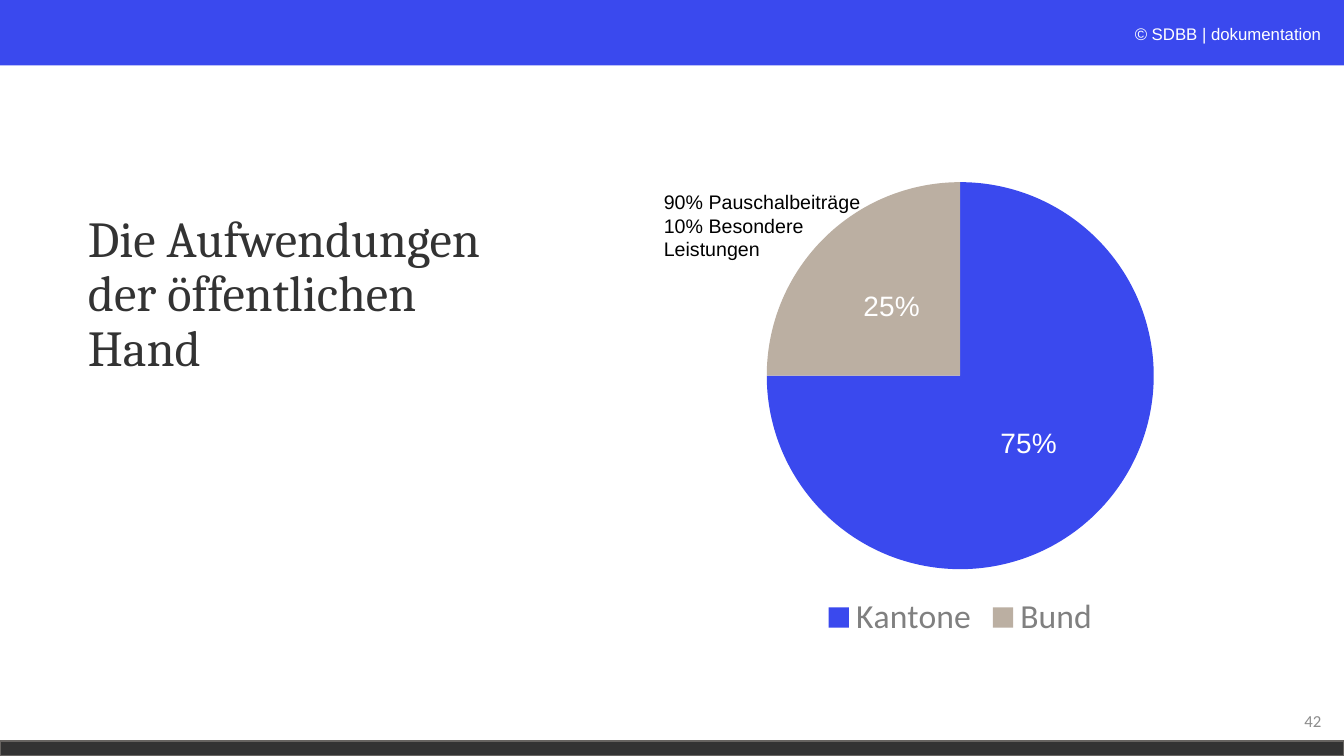
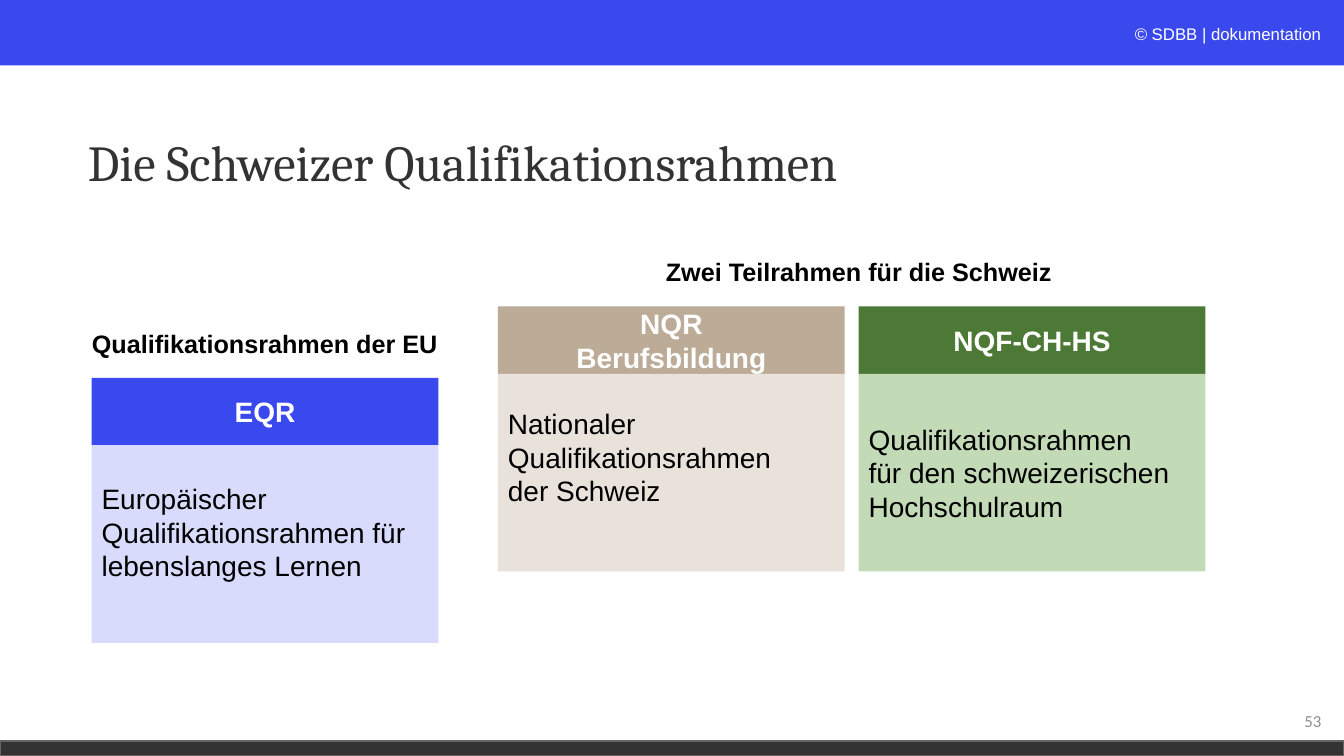
from pptx import Presentation
from pptx.chart.data import CategoryChartData
from pptx.dml.color import RGBColor
from pptx.enum.chart import XL_CHART_TYPE as ChartType
from pptx.enum.chart import XL_LABEL_POSITION as LabelPosition
from pptx.enum.chart import XL_LEGEND_POSITION as LegendPosition
from pptx.enum.shapes import MSO_SHAPE as Preset
from pptx.enum.text import MSO_ANCHOR as Anchor
from pptx.enum.text import MSO_AUTO_SIZE as AutoSize
from pptx.enum.text import PP_ALIGN as Align
from pptx.util import Cm, Pt


class Theme:
    blue = RGBColor.from_string("3A49EE")
    pale_blue = RGBColor.from_string("D8DBFC")
    sand = RGBColor.from_string("BCAB96")
    pale_sand = RGBColor.from_string("E8E2DB")
    chart_sand = RGBColor.from_string("BBAFA2")
    green = RGBColor.from_string("4C7936")
    pale_green = RGBColor.from_string("C2DAB6")
    charcoal = RGBColor.from_string("333333")
    edge = RGBColor.from_string("666360")
    legend_grey = RGBColor.from_string("808080")
    number_grey = RGBColor.from_string("8C8C8C")
    white = RGBColor.from_string("FFFFFF")
    black = RGBColor.from_string("000000")
    sans, serif, plain = "Arial", "Cambria", "Calibri"
    title, legend, card, caption, note, small = (Pt(n) for n in (36, 24, 20, 18, 14, 12))


def write(shape, text, size, color, align=Align.LEFT, font=Theme.sans, bold=False, anchor=Anchor.TOP):
    frame = shape.text_frame
    frame.text = text
    frame.word_wrap = True
    frame.auto_size = AutoSize.NONE
    frame.vertical_anchor = anchor
    for para in frame.paragraphs:
        para.alignment = align
        for span in para.runs:
            span.font.name = font
            span.font.size = size
            span.font.bold = bold
            span.font.color.rgb = color


def add_page(title, width, height, number):
    page = deck.slides.add_slide(layout)
    heading = page.shapes.title
    heading.left, heading.top = Cm(1.96), Cm(2.31)
    heading.width, heading.height = Cm(width), Cm(height)
    write(heading, title, Theme.title, Theme.charcoal, font=Theme.serif, anchor=Anchor.MIDDLE)
    heading.text_frame.paragraphs[0].line_spacing = 0.9
    box = page.shapes.add_textbox(Cm(25.93), Cm(17.65), Cm(7.62), Cm(1.02))
    write(box, number, Theme.small, Theme.number_grey, Align.RIGHT, Theme.plain, anchor=Anchor.MIDDLE)
    return page


deck = Presentation()
deck.slide_width, deck.slide_height = Cm(33.87), Cm(19.05)
layout = deck.slide_layouts.get_by_name("Title Only")

spending = add_page("Die Aufwendungen der öffentlichen Hand", 11.86, 10.26, "42")
frameworks = add_page("Die Schweizer Qualifikationsrahmen", 22.4, 3.68, "53")

top_band = spending.shapes.add_shape(Preset.RECTANGLE, 0, 0, deck.slide_width, Cm(1.65))
bottom_band = spending.shapes.add_shape(Preset.RECTANGLE, 0, Cm(18.67), deck.slide_width, Cm(0.38))
for band, color in ((top_band, Theme.blue), (bottom_band, Theme.charcoal)):
    band.shadow.inherit = False
    band.fill.solid()
    band.fill.fore_color.rgb = color
top_band.line.fill.background()
bottom_band.line.color.rgb = Theme.edge
bottom_band.line.width = Pt(1)

credit = spending.shapes.add_textbox(Cm(21.89), Cm(0.48), Cm(11.66), Cm(0.76))
credit.text_frame.text = "© "
credit.text_frame.paragraphs[0].add_run().text = "SDBB | dokumentation"
for span, italic in zip(credit.text_frame.paragraphs[0].runs, (True, False)):
    span.font.name = Theme.sans
    span.font.size = Theme.small
    span.font.italic = italic
    span.font.color.rgb = Theme.white
credit.text_frame.paragraphs[0].alignment = Align.RIGHT
credit.text_frame.word_wrap = True

for shape_id, shared in enumerate((top_band, bottom_band, credit), start=20):
    shared.element.xpath(".//p:cNvPr")[0].set("id", str(shape_id))
    layout.shapes.element.append(shared.element)

data = CategoryChartData()
data.categories = ["Kantone", "Bund"]
data.add_series("Series 1", (75, 25))
chart = spending.shapes.add_chart(
    ChartType.PIE, Cm(14.55), Cm(4.24), Cm(19.3), Cm(12.01), data
).chart
chart.has_title = False
chart.font.name = Theme.plain
chart.has_legend = True
chart.legend.position = LegendPosition.BOTTOM
chart.legend.include_in_layout = False
chart.legend.font.name = Theme.plain
chart.legend.font.size = Theme.legend
chart.legend.font.color.rgb = Theme.legend_grey

pie = chart.plots[0]
pie.vary_by_categories = True
for index, color in enumerate((Theme.blue, Theme.chart_sand)):
    fill = pie.series[0].points[index].format.fill
    fill.solid()
    fill.fore_color.rgb = color
pie.has_data_labels = True
labels = pie.data_labels
labels.show_value = False
labels.show_percentage = True
labels.number_format = "0%"
labels.number_format_is_linked = False
labels.position = LabelPosition.CENTER
labels.font.name = Theme.sans
labels.font.size = Theme.card
labels.font.color.rgb = Theme.white

note = spending.shapes.add_textbox(Cm(16.48), Cm(4.67), Cm(5.66), Cm(2.06))
write(note, "90% Pauschalbeiträge\n10% Besondere Leistungen", Theme.note, Theme.black)

card_width, head_height, body_height = 8.74, 1.7, 4.98
eu_top, swiss_top = 9.52, 7.72
cards = (
    (2.31, eu_top, "EQR", Theme.blue, Theme.pale_blue, 0.73,
     "Europäischer Qualifikationsrahmen für lebenslanges Lernen"),
    (12.55, swiss_top, "NQR\nBerufsbildung", Theme.sand, Theme.pale_sand, 0.92,
     "Nationaler\nQualifikationsrahmen\nder Schweiz"),
    (21.64, swiss_top, "NQF-CH-HS", Theme.green, Theme.pale_green, 0.13,
     "Qualifikationsrahmen\nfür den schweizerischen\nHochschulraum"),
)
for left, top, name, strong, pale, bottom_inset, description in cards:
    head = frameworks.shapes.add_shape(
        Preset.RECTANGLE, Cm(left), Cm(top), Cm(card_width), Cm(head_height)
    )
    body = frameworks.shapes.add_shape(
        Preset.RECTANGLE, Cm(left), Cm(top + head_height), Cm(card_width), Cm(body_height)
    )
    for part, color in ((head, strong), (body, pale)):
        part.shadow.inherit = False
        part.fill.solid()
        part.fill.fore_color.rgb = color
        part.line.fill.background()
    write(head, name, Theme.card, Theme.white, Align.CENTER, bold=True, anchor=Anchor.MIDDLE)
    write(body, description, Theme.card, Theme.black, anchor=Anchor.MIDDLE)
    body.text_frame.margin_bottom = Cm(bottom_inset)

captions = (
    (1.57, eu_top, 10.21, "Qualifikationsrahmen der EU"),
    (16.31, swiss_top, 10.67, "Zwei Teilrahmen für die Schweiz"),
)
for left, card_top, width, text in captions:
    box = frameworks.shapes.add_textbox(Cm(left), Cm(card_top - 1.38), Cm(width), Cm(1.02))
    write(box, text, Theme.caption, Theme.black, Align.CENTER, bold=True)

deck.save("out.pptx")
